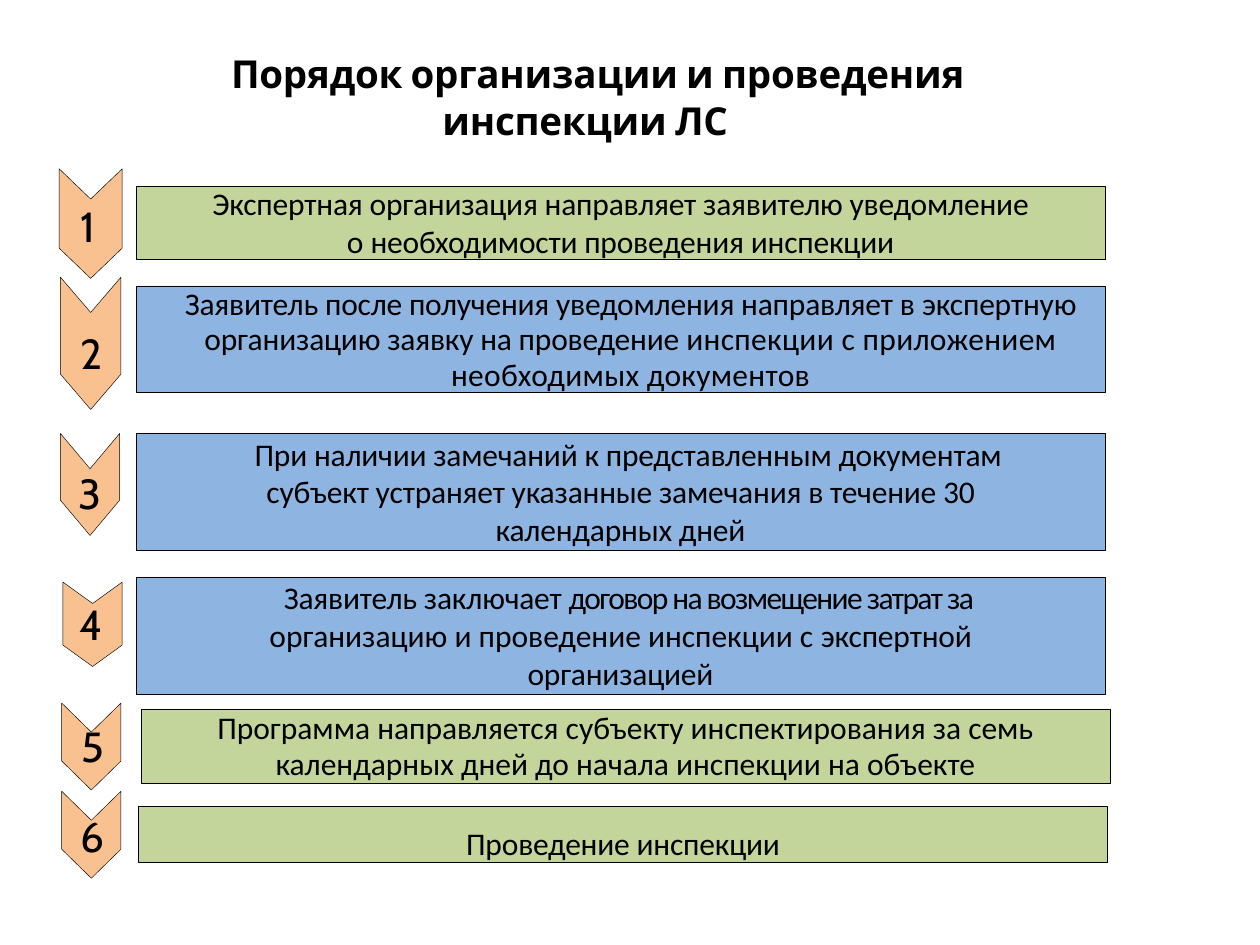
from pptx import Presentation
from pptx.dml.color import RGBColor
from pptx.enum.shapes import MSO_SHAPE as Shape
from pptx.enum.text import MSO_ANCHOR as Anchor, MSO_AUTO_SIZE as AutoSize, PP_ALIGN as Align
from pptx.util import Inches, Pt

COLORS = {"text": "000000", "arrow": "F9C090", "green": "C3D59B", "blue": "8EB4E2"}
BAR_WIDTH = 7.69

# Each paragraph: (left margin, right margin, first-line indent, line points, runs);
# each run: (text, letter spacing in points)
STEPS = [
    dict(arrow=(0.47, 1.34, 0.5, 0.87), notch=0.24, number=(0.63, 1.58),
         bar=(1.08, 1.48, BAR_WIDTH, 0.58), inset=0, color="green", paragraphs=[
             (0, 0, 0, 20.4, [("Экспертная организация направляет заявителю уведомление", -0.1)]),
             (0.62, 0.62, 0, None, [("о ", 0), ("необходимости проведения инспекции", -0.1)])]),
    dict(arrow=(0.48, 2.2, 0.48, 1.05), notch=0.28, number=(0.63, 2.59),
         bar=(1.08, 2.27, BAR_WIDTH, 0.84), inset=0, color="blue", paragraphs=[
             (0.16, 0, 0, 20.3, [
                 ("Заявитель после получения уведомления направляет ", -0.1), ("в ", 0),
                 ("экспертную организацию заявку на проведение ", -0.1),
                 ("инспекции с приложением необходимых документов", 0.2)])]),
    dict(arrow=(0.48, 3.44, 0.47, 0.81), notch=0.28, number=(0.61, 3.7),
         bar=(1.08, 3.44, BAR_WIDTH, 0.93), inset=0.01, color="blue", paragraphs=[
             (0.61, 0.61, 0.12, 21.6, [
                 ("При наличии замечаний к представленным документам субъект устраняет "
                  "указанные замечания в течение 30 календарных дней", -0.1)])]),
    dict(arrow=(0.5, 4.62, 0.47, 0.67), notch=0.17, number=(0.62, 4.74),
         bar=(1.08, 4.58, BAR_WIDTH, 0.93), inset=0.01, color="blue", paragraphs=[
             (0.61, 0.61, 0.12, 21.6, [
                 ("Заявитель заключает ", -0.1), ("договор на возмещение затрат за о", -0.9),
                 ("рганизацию и проведение инспекции с ", 0),
                 ("экспертной организацией", -0.1)])]),
    dict(arrow=(0.49, 5.58, 0.47, 0.69), notch=0.23, number=(0.64, 5.71),
         bar=(1.12, 5.63, BAR_WIDTH, 0.59), inset=0, color="green", paragraphs=[
             (0.3, 0.3, 0, 20.6, [
                 ("Программа направляется субъекту инспектирования за семь "
                  "календарных дней до начала инспекции на объекте", 0)])]),
    dict(arrow=(0.49, 6.28, 0.47, 0.69), notch=0.23, number=(0.63, 6.42),
         bar=(1.1, 6.4, BAR_WIDTH, 0.44), inset=0.14, color="green", paragraphs=[
             (0, 0, 0, None, [("Проведение инспекции", -0.1)])]),
]


def rgb(name):
    return RGBColor.from_string(COLORS[name])


def prepare_frame(frame, inset):
    frame.auto_size = AutoSize.NONE
    frame.word_wrap = True
    frame.vertical_anchor = Anchor.TOP
    frame.margin_left = frame.margin_right = frame.margin_bottom = 0
    frame.margin_top = Inches(inset)


def set_indents(paragraph, left, right=0, first=0):
    properties = paragraph._p.get_or_add_pPr()
    for key, value in (("marL", left), ("marR", right), ("indent", first)):
        properties.set(key, str(Inches(value)))


def format_run(run, font_name, size, spacing=0, bold=False):
    run.font.name = font_name
    run.font.size = Pt(size)
    run.font.bold = bold
    run.font.color.rgb = rgb("text")
    run._r.get_or_add_rPr().set("spc", str(round(spacing * 100)))


def paint(shape, color):
    shape.shadow.inherit = False
    shape.fill.solid()
    shape.fill.fore_color.rgb = rgb(color)
    shape.line.color.rgb = rgb("text")
    shape.line.width = Pt(0.25)


def add_heading(slide, box):
    heading = slide.shapes.title
    heading.left, heading.top, heading.width, heading.height = map(Inches, box)
    prepare_frame(heading.text_frame, 0.01)
    heading.text_frame.text = "Порядок организации и проведения инспекции ЛС"
    paragraph = heading.text_frame.paragraphs[0]
    paragraph.alignment = Align.CENTER
    set_indents(paragraph, 0.01, first=0.2)
    format_run(paragraph.runs[0], "Cabin", 22, -0.1, bold=True)


def add_arrow(slide, box, notch):
    left, top, width, height = map(Inches, box)
    depth = Inches(notch)
    middle, right, bottom = left + width // 2, left + width, top + height
    outline = slide.shapes.build_freeform(right, top)
    outline.add_line_segments([(right, bottom - depth), (middle, bottom),
                               (left, bottom - depth), (left, top), (middle, top + depth)])
    paint(outline.convert_to_shape(), "arrow")


def add_number(slide, position, number):
    left, top = map(Inches, position)
    label = slide.shapes.add_textbox(left, top, Inches(0.2), Inches(0.43))
    prepare_frame(label.text_frame, 0.01)
    label.text_frame.text = str(number)
    paragraph = label.text_frame.paragraphs[0]
    set_indents(paragraph, 0.01)
    format_run(paragraph.runs[0], "Cabin", 24)


def add_bar(slide, box, inset, color, paragraphs):
    bar = slide.shapes.add_shape(Shape.RECTANGLE, *map(Inches, box))
    paint(bar, color)
    frame = bar.text_frame
    prepare_frame(frame, inset)
    for index, (left, right, first, line_points, runs) in enumerate(paragraphs):
        paragraph = frame.add_paragraph() if index else frame.paragraphs[0]
        paragraph.alignment = Align.CENTER
        set_indents(paragraph, left, right, first)
        if line_points:
            paragraph.line_spacing = Pt(line_points)
        for text, spacing in runs:
            run = paragraph.add_run()
            run.text = text
            format_run(run, "Calibri", 18, spacing)


def add_step(slide, number, step):
    add_arrow(slide, step["arrow"], step["notch"])
    add_number(slide, step["number"], number)
    add_bar(slide, step["bar"], step["inset"], step["color"], step["paragraphs"])


def main():
    deck = Presentation()
    deck.slide_width, deck.slide_height = Inches(10), Inches(7.5)
    slide = deck.slides.add_slide(deck.slide_layouts[5])

    # Heading
    add_heading(slide, (0.89, 0.39, 7.5, 0.75))

    # Numbered inspection steps
    for number, step in enumerate(STEPS, start=1):
        add_step(slide, number, step)

    deck.save("out.pptx")


if __name__ == "__main__":
    main()
